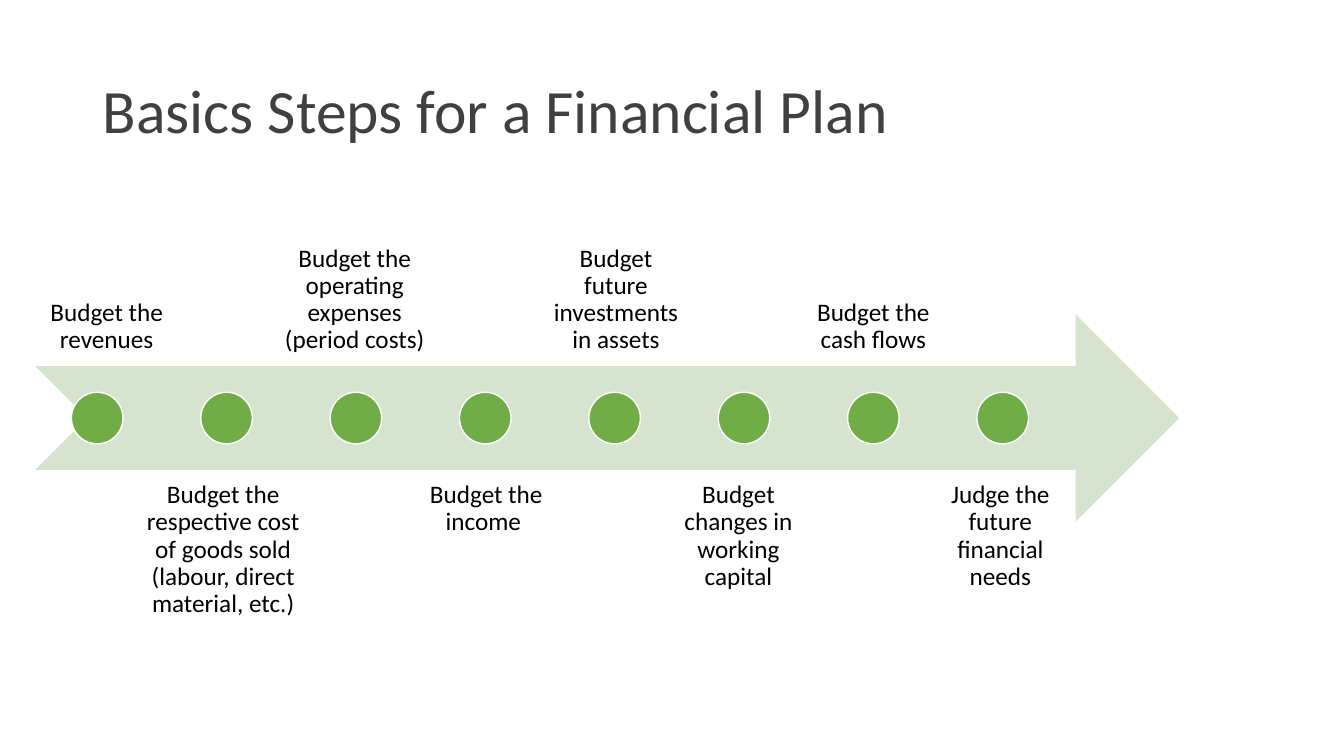
from pptx import Presentation
from pptx.dml.color import RGBColor
from pptx.enum.shapes import MSO_SHAPE
from pptx.enum.text import MSO_ANCHOR, PP_ALIGN
from pptx.util import Cm, Pt

ARROW, DOT = MSO_SHAPE.NOTCHED_RIGHT_ARROW, MSO_SHAPE.OVAL
TOP, MIDDLE, BOTTOM = MSO_ANCHOR.TOP, MSO_ANCHOR.MIDDLE, MSO_ANCHOR.BOTTOM
LEFT, CENTER = PP_ALIGN.LEFT, PP_ALIGN.CENTER

FONT = "Calibri"
TITLE_GREY = RGBColor(0x40, 0x40, 0x41)
BLACK = RGBColor(0, 0, 0)
WHITE = RGBColor(0xFF, 0xFF, 0xFF)
PALE_GREEN = RGBColor(0xD5, 0xE3, 0xCF)
GREEN = RGBColor(0x70, 0xAD, 0x47)

STEPS = [
    ("Budget the revenues", 0.02, 3.56),
    ("Budget the respective cost of goods sold (labour, direct material, etc.)", 2.21, 5.05),
    ("Budget the operating expenses (period costs)", 5.74, 4.62),
    ("Budget the income ", 9.55, 3.63),
    ("Budget future investments in assets", 12.55, 4.17),
    ("Budget changes in working capital", 15.47, 4.5),
    ("Budget the cash flows", 18.87, 4.5),
    ("Judge the future financial needs", 22.25, 4.14),
]
DOT_SIZE = 1.3
FIRST_DOT = 0.91
DOT_PITCH = 3.26


def add_text(s, box, text, size, color, align, anchor, inset=None):
    tf = s.shapes.add_textbox(*map(Cm, box)).text_frame
    tf.word_wrap = True
    tf.vertical_anchor = anchor
    if inset is not None:
        tf.margin_left = tf.margin_right = tf.margin_top = tf.margin_bottom = Cm(inset)
    tf.text = text
    p = tf.paragraphs[0]
    p.alignment = align
    p.line_spacing = 0.9
    font = p.runs[0].font
    font.name, font.size, font.color.rgb = FONT, Pt(size), color


def add_filled(s, kind, box, fill):
    sp = s.shapes.add_shape(kind, *map(Cm, box))
    sp.shadow.inherit = False
    sp.fill.solid()
    sp.fill.fore_color.rgb = fill
    sp.line.fill.background()
    return sp


def add_title(s, box):
    add_text(s, box, "Basics Steps for a Financial Plan", 44, TITLE_GREY, LEFT, MIDDLE)


def add_timeline(s, box):
    x, y, w, h = box
    add_filled(s, ARROW, box, PALE_GREEN)
    for i, (text, offset, width) in enumerate(STEPS):
        above = i % 2 == 0
        label_y = y - 0.75 * h if above else y + 0.75 * h
        add_text(s, (x + offset, label_y, width, h), text, 18, BLACK,
                 CENTER, BOTTOM if above else TOP, 0.3)
        dot_x = x + FIRST_DOT + i * DOT_PITCH
        dot = add_filled(s, DOT, (dot_x, y + (h - DOT_SIZE) / 2, DOT_SIZE, DOT_SIZE), GREEN)
        dot.line.color.rgb = WHITE
        dot.line.width = Pt(1)


def main():
    prs = Presentation()
    prs.slide_width, prs.slide_height = Cm(33.87), Cm(19.05)
    s = prs.slides.add_slide(prs.slide_layouts[6])
    add_title(s, (2.34, 1.02, 29.21, 3.68))
    add_timeline(s, (0.89, 7.92, 28.83, 5.23))
    prs.save("out.pptx")


if __name__ == "__main__":
    main()
